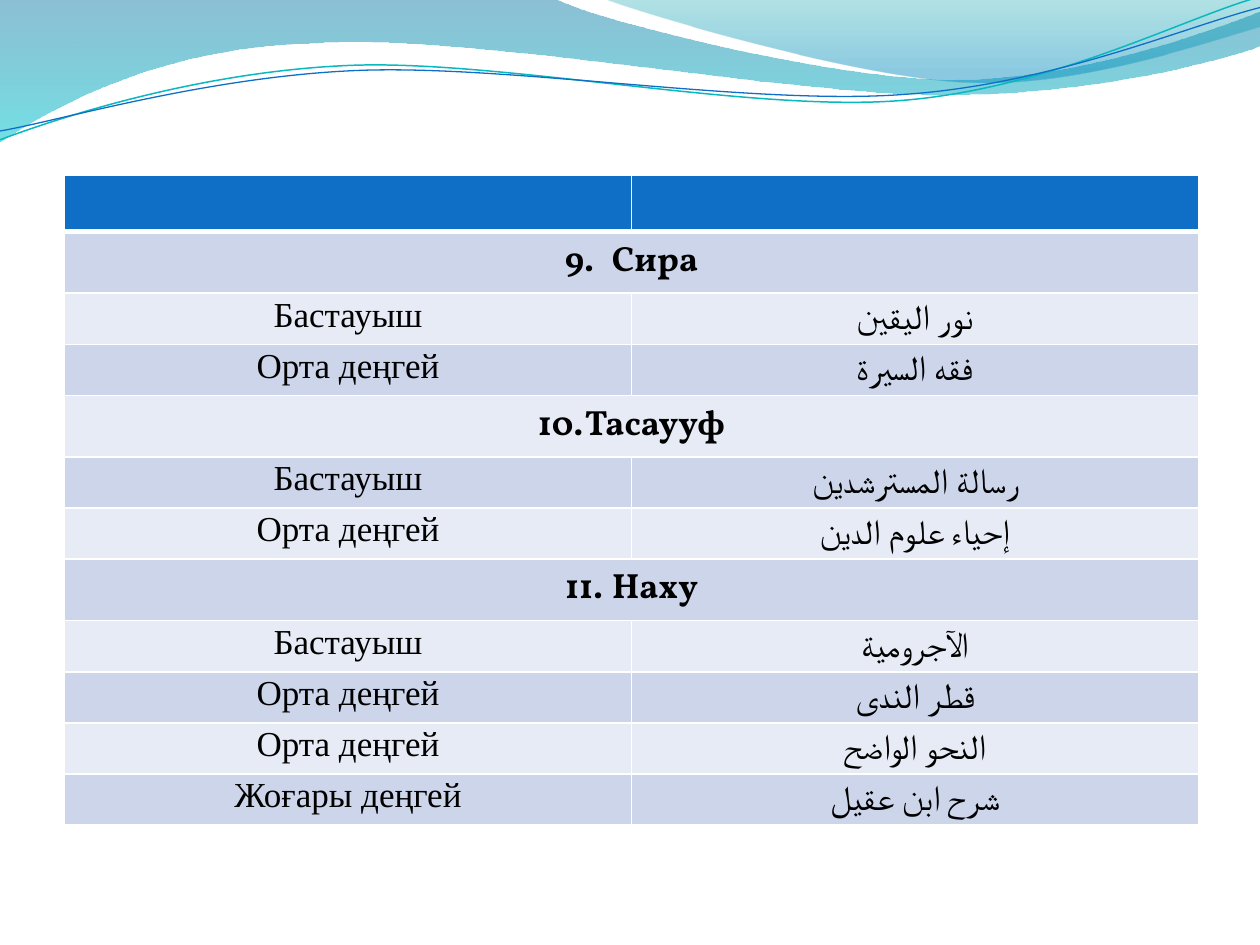
"""Build a slide with a wave banner and a table of textbooks by subject and level."""
from dataclasses import dataclass
from typing import Optional

from lxml import etree
from pptx import Presentation
from pptx.dml.color import RGBColor
from pptx.enum.text import PP_ALIGN
from pptx.oxml.ns import qn
from pptx.util import Cm, Pt

CENTER = PP_ALIGN.CENTER
CM_PER_INCH = 2.54
HEADER_FILL = "0F6FC6"
BAND_FILLS = ("CCD5EA", "E7EBF5")
HEADER_HEIGHT, SECTION_HEIGHT, ENTRY_HEIGHT = Cm(1.14), Cm(1.24), Cm(1.03)
SECTION_FONT = {"name": "Vollkorn", "size": Pt(20), "bold": True}
LEVEL_FONT = {"name": "Times New Roman", "size": Pt(20), "bold": False}
BOOK_FONT = {"name": "Calibri", "size": Pt(20), "bold": False}
ENTRY_MARGINS = {"margin_left": Cm(0.18), "margin_right": Cm(0.18),
                 "margin_top": Cm(0), "margin_bottom": Cm(0)}


@dataclass
class GradientStop:
    position: float
    color: str
    opacity: int


@dataclass
class Wave:
    start: tuple
    segments: list
    stops: tuple = ()
    line_color: Optional[str] = None
    line_width: float = 0


@dataclass
class Section:
    number: int
    title: str
    entries: list


WAVES = [
    Wave((0, 0), [
        (4.4, -0.01), (4.76, 0.17, 6.64, 0.63, 7.58, 0.63),
        (8.53, 0.63, 9.58, 0.26, 10, 0.09), (10.01, 0.36),
        (9.83, 0.44, 8.7, 0.76, 7.46, 0.75), (6.22, 0.75, 3.82, 0.28, 2.57, 0.34),
        (1.29, 0.36, 0.46, 0.83, -0.01, 1.13)],
        stops=(GradientStop(0, "0074A1", 45), GradientStop(1, "00C6CF", 55))),
    Wave((4.79, -0.01), [
        (5.09, 0.11, 6.82, 0.62, 7.69, 0.65), (8.56, 0.69, 9.61, 0.32, 10, 0.21),
        (10, 0)],
        stops=(GradientStop(0, "00A1A9", 30), GradientStop(0.8, "008BBF", 45))),
    Wave((0, 1.11), [
        (0.48, 0.93, 1.58, 0.57, 2.77, 0.52), (3.95, 0.47, 5.93, 0.89, 7.13, 0.8),
        (8.33, 0.71, 9.38, 0.15, 9.98, -0.02)],
        line_color="0AB8BF", line_width=0.85),
    Wave((0, 1.04), [
        (0.47, 0.96, 1.64, 0.61, 2.83, 0.56), (4.03, 0.51, 5.97, 0.84, 7.17, 0.75),
        (8.36, 0.67, 9.41, 0.21, 10, 0.06)],
        line_color="0F6FC6", line_width=0.75),
]

SECTIONS = [
    Section(9, "Сира", [("Бастауыш", "نور اليقين"), ("Орта деңгей", "فقه السيرة")]),
    Section(10, "Тасаууф", [("Бастауыш", "رسالة المسترشدين"),
                            ("Орта деңгей", "إحياء علوم الدين")]),
    Section(11, "Наху", [("Бастауыш", "الآجرومية"), ("Орта деңгей", "قطر الندى"),
                         ("Орта деңгей", "النحو الواضح"),
                         ("Жоғары деңгей", "شرح ابن عقيل")]),
]


def paint(color_format, color: str) -> None:
    color_format.rgb = RGBColor.from_string(color)


def apply_format(target, values: dict) -> None:
    for name, value in values.items():
        setattr(target, name, value)


def to_length(inches: float) -> int:
    return Cm(inches * CM_PER_INCH)


def bend_segments(shape, segments: list) -> None:
    """Turn each run of three line points that belongs to a curve into one curve."""
    lines = iter(list(shape._element.iter(qn("a:lnTo"))))
    for segment in segments:
        first = next(lines)
        if len(segment) == 2:
            continue
        first.tag = qn("a:cubicBezTo")
        for _ in range(2):
            extra = next(lines)
            first.append(extra[0])
            extra.getparent().remove(extra)


def draw_wave(slide, wave: Wave) -> None:
    points = [(to_length(x), to_length(y)) for segment in wave.segments
              for x, y in zip(segment[::2], segment[1::2])]
    builder = slide.shapes.build_freeform(*map(to_length, wave.start))
    builder.add_line_segments(points, close=bool(wave.stops))
    shape = builder.convert_to_shape()
    bend_segments(shape, wave.segments)
    shape.shadow.inherit = False
    if not wave.stops:
        shape.fill.background()
        paint(shape.line.color, wave.line_color)
        shape.line.width = Pt(wave.line_width)
        return
    shape.line.fill.background()
    shape.fill.gradient()
    shape.fill.gradient_angle = 270
    for target, stop in zip(shape.fill.gradient_stops, wave.stops):
        target.position = stop.position
        paint(target.color, stop.color)
    colors = shape._element.iter(qn("a:srgbClr"))
    for color, stop in zip(colors, wave.stops):
        etree.SubElement(color, qn("a:alpha"), val=str(stop.opacity * 1000))


def style_cell(cell, fill: str, bottom_width: float = 1) -> None:
    properties = cell._tc.get_or_add_tcPr()
    for side, width in (("L", 1), ("R", 1), ("T", 1), ("B", bottom_width)):
        border = etree.SubElement(properties, qn(f"a:ln{side}"), w=str(Pt(width)))
        solid = etree.SubElement(border, qn("a:solidFill"))
        etree.SubElement(solid, qn("a:srgbClr"), val="FFFFFF")
    cell.fill.solid()
    paint(cell.fill.fore_color, fill)


def write_cell(cell, text: str, font: dict):
    paragraph = cell.text_frame.paragraphs[0]
    paragraph.alignment = CENTER
    run = paragraph.add_run()
    run.text = text
    apply_format(run.font, font)
    paint(run.font.color, "000000")
    etree.SubElement(run._r.get_or_add_rPr(), qn("a:cs"), typeface=font["name"])
    return paragraph


def number_paragraph(paragraph, number: int) -> None:
    properties = paragraph._p.get_or_add_pPr()
    properties.set("marL", str(Cm(0.95)))
    properties.set("indent", str(-Cm(0.95)))
    etree.SubElement(properties, qn("a:buFont"), typeface="+mj-lt")
    etree.SubElement(properties, qn("a:buAutoNum"), type="arabicPeriod",
                     startAt=str(number))


def write_section(table, row: int, section: Section) -> None:
    table.rows[row].height = SECTION_HEIGHT
    heading = table.cell(row, 0)
    heading.merge(table.cell(row, 1))
    number_paragraph(write_cell(heading, section.title, SECTION_FONT), section.number)
    for entry_row, entry in enumerate(section.entries, row + 1):
        table.rows[entry_row].height = ENTRY_HEIGHT
        for column, font in enumerate((LEVEL_FONT, BOOK_FONT)):
            cell = table.cell(entry_row, column)
            apply_format(cell, ENTRY_MARGINS)
            write_cell(cell, entry[column], font).line_spacing = 1.07


def draw_table(slide) -> None:
    row_count = 1 + sum(1 + len(section.entries) for section in SECTIONS)
    table = slide.shapes.add_table(row_count, 2, Cm(1.3), Cm(3.53), Cm(22.86),
                                   ENTRY_HEIGHT * row_count).table
    table.rows[0].height = HEADER_HEIGHT
    for row in range(row_count):
        for column in range(2):
            fill = BAND_FILLS[(row - 1) % 2] if row else HEADER_FILL
            style_cell(table.cell(row, column), fill, 1 if row else 3)
    row = 1
    for section in SECTIONS:
        write_section(table, row, section)
        row += 1 + len(section.entries)


def main() -> None:
    presentation = Presentation()
    presentation.slide_width, presentation.slide_height = Cm(25.4), Cm(19.05)
    slide = presentation.slides.add_slide(presentation.slide_layouts[6])
    for wave in WAVES:
        draw_wave(slide, wave)
    draw_table(slide)
    presentation.save("out.pptx")


if __name__ == "__main__":
    main()
